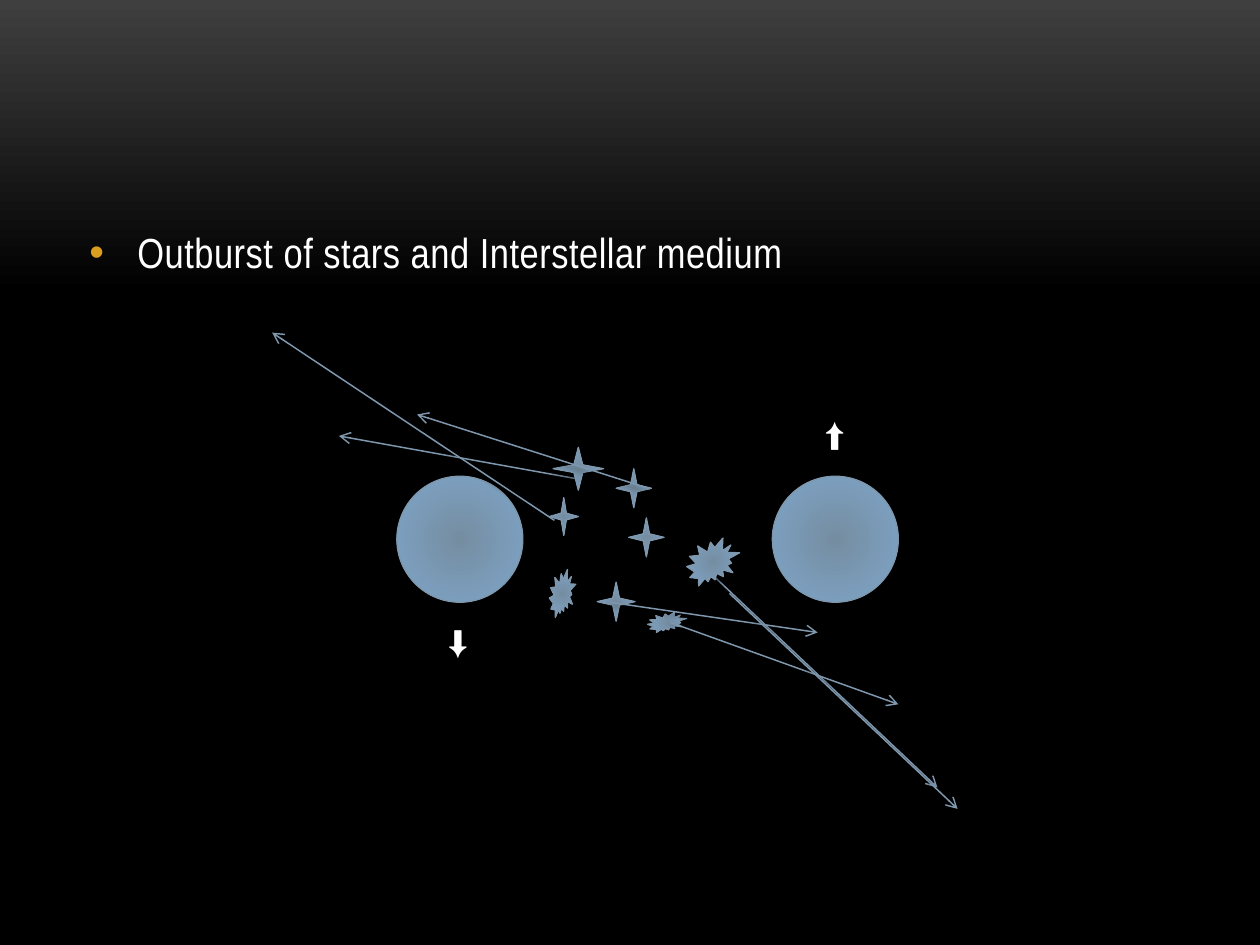
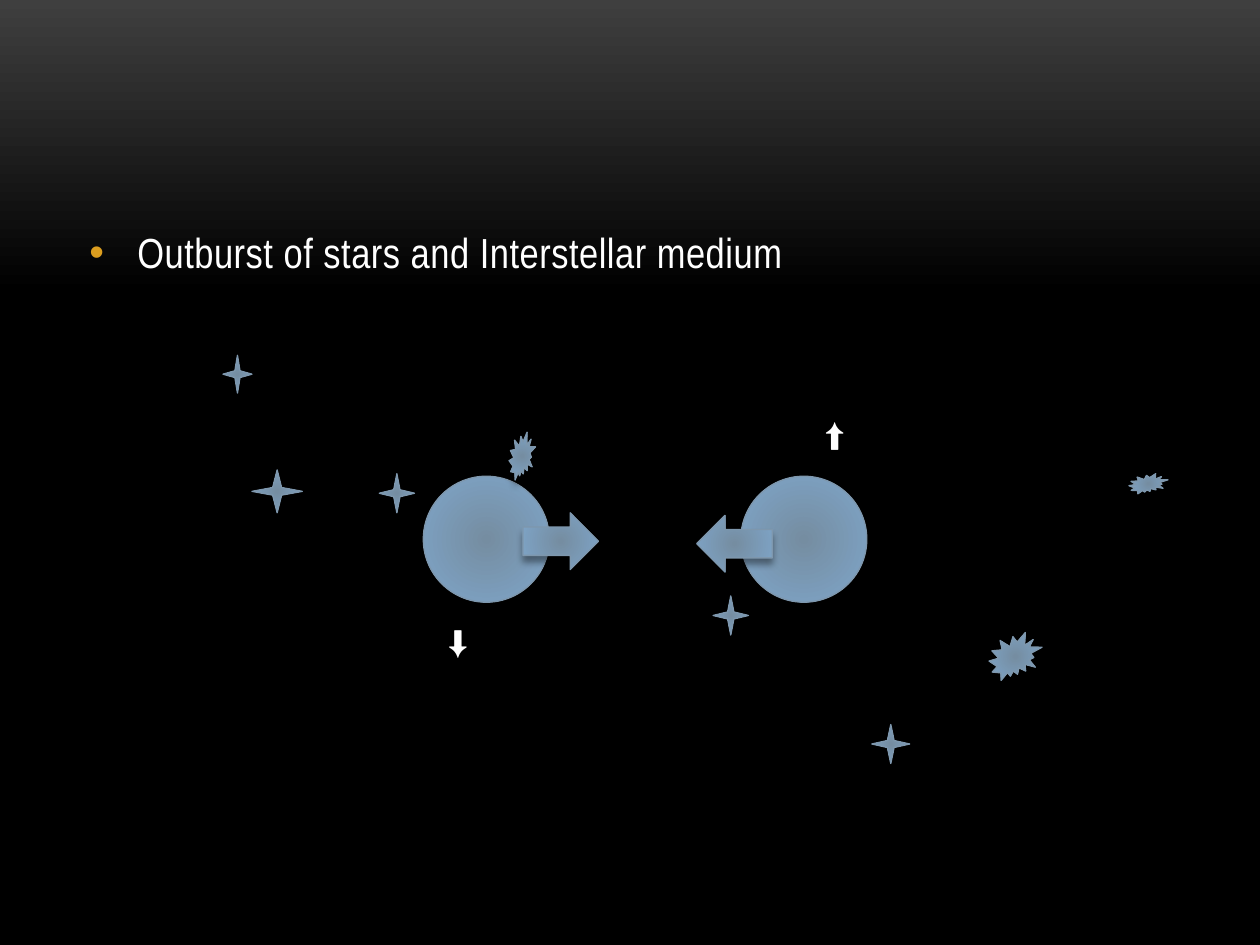
from lxml.etree import SubElement
from pptx import Presentation
from pptx.dml.color import RGBColor
from pptx.enum.shapes import MSO_CONNECTOR as Connector, MSO_SHAPE as Shape
from pptx.enum.text import MSO_ANCHOR as Anchor, MSO_AUTO_SIZE as AutoSize
from pptx.oxml import parse_xml
from pptx.oxml.ns import nsdecls, qn
from pptx.util import Inches, Pt

COLORS = {
    "sky": "3F3F3F", "space": "000000", "core": "758DA1", "rim": "7FA6CA",
    "outline": "7E97AD", "bullet": "DC9E1F", "text": "FFFFFF", "shadow": "000000",
}
HEADLINE = "Outburst of stars and Interstellar medium"
BODY_AREA = (0.61, 1.75, 8.67, 4.5)
SPIN_MARKS = [("⬆", 6.45, 3.24), ("⬇", 3.46, 4.89)]
SPIN_MARK_SIZE = (0.43, 0.4)

BODIES = {
    "galaxy": (Shape.OVAL, 1, 1),
    "large burst": (Shape.EXPLOSION2, 0.42, 0.38),
    "flat burst": (Shape.EXPLOSION2, 0.31, 0.16),
    "tall burst": (Shape.EXPLOSION2, 0.21, 0.38),
    "small star": (Shape.STAR_4_POINT, 0.23, 0.3),
    "wide star": (Shape.STAR_4_POINT, 0.3, 0.31),
    "star": (Shape.STAR_4_POINT, 0.28, 0.31),
    "large star": (Shape.STAR_4_POINT, 0.4, 0.34),
    "pull": (Shape.LEFT_ARROW, 0.6, 0.45),
}

OUTBURST = [
    ("galaxy", 6.13, 3.78),
    ("galaxy", 3.15, 3.78),
    ("ejection", 5.63, 4.54, 7.44, 6.25),
    ("large burst", 5.45, 4.27),
    ("flat burst", 5.14, 4.86),
    ("tall burst", 4.36, 4.52),
    ("small star", 4.36, 3.95),
    ("wide star", 4.74, 4.62),
    ("star", 4.89, 3.72),
    ("star", 4.99, 4.11),
    ("ejection", 4.84, 4.78, 6.49, 5.02),
    ("ejection", 4.58, 3.8, 2.69, 3.46),
    ("ejection", 5.32, 4.94, 7.13, 5.59),
    ("ejection", 4.4, 4.13, 2.16, 2.64),
    ("large star", 4.39, 3.55),
    ("ejection", 5.16, 3.88, 3.31, 3.29),
    ("ejection", 5.79, 4.71, 7.6, 6.42),
]
APPROACH = [
    ("galaxy", 5.88, 3.78),
    ("galaxy", 3.36, 3.78),
    ("large burst", 7.85, 5.02),
    ("flat burst", 8.96, 3.76),
    ("tall burst", 4.04, 3.43),
    ("small star", 1.77, 2.82),
    ("wide star", 6.92, 5.75),
    ("star", 3.01, 3.76),
    ("star", 5.66, 4.73),
    ("large star", 2, 3.73),
    ("pull", 5.53, 4.09),
    ("pull", 4.15, 4.07, 180),
]


def color(name):
    return RGBColor.from_string(COLORS[name])


def inches(values):
    return [Inches(value) for value in values]


def paint_gradient(fill, host, stops, direction):
    fill.gradient()
    stop_xml = "".join(
        f'<a:gs pos="{share * 1000}"><a:srgbClr val="{COLORS[name]}"/></a:gs>'
        for share, name in stops
    )
    gradient = parse_xml(
        f'<a:gradFill {nsdecls("a")} rotWithShape="1">'
        f"<a:gsLst>{stop_xml}</a:gsLst>{direction}</a:gradFill>"
    )
    plain = host.find(".//" + qn("a:gradFill"))
    plain.getparent().replace(plain, gradient)


def add_shadow(shape, blur, distance):
    shape.element.spPr.append(parse_xml(
        f'<a:effectLst {nsdecls("a")}><a:outerShdw blurRad="{Pt(blur)}" '
        f'dist="{Pt(distance)}" dir="5400000" rotWithShape="0">'
        f'<a:srgbClr val="{COLORS["shadow"]}"><a:alpha val="40000"/></a:srgbClr>'
        "</a:outerShdw></a:effectLst>"
    ))


def set_outline(shape, width):
    shape.line.color.rgb = color("outline")
    shape.line.width = Pt(width)


def style_font(font, name, size):
    font.name = name
    font.size = Pt(size)
    font.color.rgb = color("text")


def add_body(page, name, left, top, rotation=0):
    kind, width, height = BODIES[name]
    body = page.shapes.add_shape(kind, *inches((left, top, width, height)))
    body.rotation = rotation
    paint_gradient(
        body.fill, body.element.spPr, [(0, "core"), (100, "rim")],
        '<a:path path="circle"><a:fillToRect l="100000" t="100000" '
        'r="100000" b="100000"/></a:path>',
    )
    set_outline(body, 0.75)
    add_shadow(body, 4, 3.4)


def add_ejection(page, *ends):
    arrow = page.shapes.add_connector(Connector.STRAIGHT, *inches(ends))
    set_outline(arrow, 0.85)
    SubElement(arrow.line._get_or_add_ln(), qn("a:tailEnd"), type="arrow")
    add_shadow(arrow, 3, 2)


def add_spin_mark(page, mark, left, top):
    box = page.shapes.add_textbox(*inches((left, top, *SPIN_MARK_SIZE)))
    frame = box.text_frame
    frame.text = mark
    frame.word_wrap = False
    frame.auto_size = AutoSize.SHAPE_TO_FIT_TEXT
    style_font(frame.paragraphs[0].runs[0].font, "Arial", 18)


def write_headline(page):
    title, body = page.placeholders
    title.element.getparent().remove(title.element)
    body.left, body.top, body.width, body.height = inches(BODY_AREA)
    frame = body.text_frame
    frame.text = HEADLINE
    frame.vertical_anchor = Anchor.TOP
    para = frame.paragraphs[0]
    para.space_before, para.space_after = Pt(0), Pt(6)
    settings = para._p.get_or_add_pPr()
    settings.set("marL", str(Inches(0.38)))
    settings.set("indent", str(-Inches(0.38)))
    tint = SubElement(settings, qn("a:buClr"))
    SubElement(tint, qn("a:srgbClr"), val=COLORS["bullet"])
    SubElement(settings, qn("a:buChar"), char="•")
    span = para.runs[0]
    style_font(span.font, "Arial Narrow", 24)
    span._r.get_or_add_rPr().set("spc", "30")


def add_scene(deck, scene):
    page = deck.slides.add_slide(deck.slide_layouts[1])
    write_headline(page)
    for name, *place in scene:
        if name == "ejection":
            add_ejection(page, *place)
        else:
            add_body(page, name, *place)
    for mark in SPIN_MARKS:
        add_spin_mark(page, *mark)


def main():
    deck = Presentation()
    deck.slide_width, deck.slide_height = inches((10, 7.5))
    master = deck.slide_master
    paint_gradient(
        master.background.fill, master.element,
        [(0, "sky"), (31, "space"), (100, "space")],
        '<a:lin ang="5400000" scaled="0"/>',
    )
    for scene in (OUTBURST, APPROACH):
        add_scene(deck, scene)
    deck.save("out.pptx")


if __name__ == "__main__":
    main()
